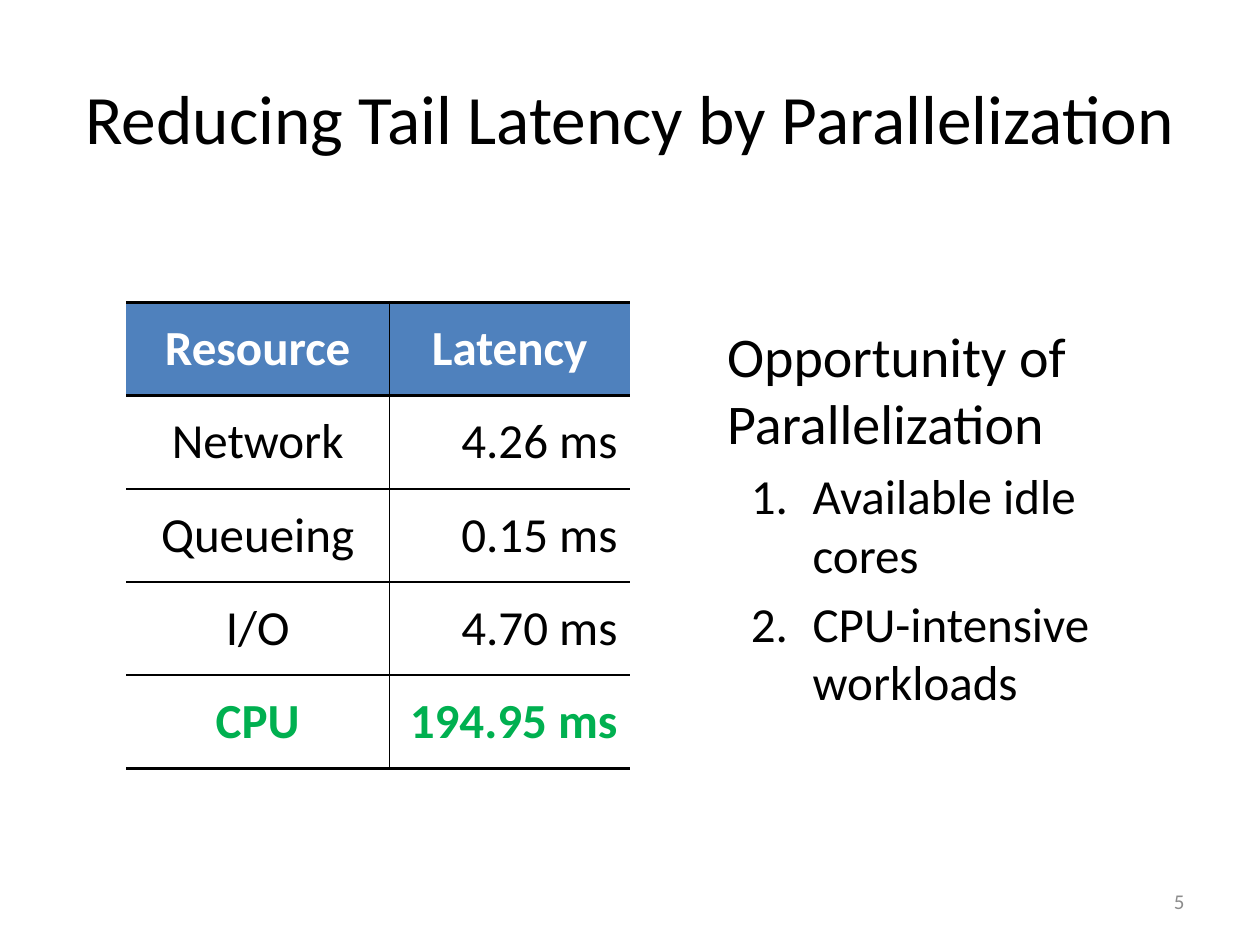
"""Build a slide on tail latency with a resource table and a numbered list."""
from lxml.etree import SubElement
from pptx import Presentation
from pptx.dml.color import RGBColor
from pptx.enum.text import MSO_ANCHOR, MSO_AUTO_SIZE, PP_ALIGN
from pptx.oxml import parse_xml
from pptx.oxml.ns import nsdecls, qn
from pptx.util import Inches, Pt

BLACK = RGBColor(0x00, 0x00, 0x00)
WHITE = RGBColor(0xFF, 0xFF, 0xFF)
BLUE = RGBColor(0x4F, 0x81, 0xBD)
GREEN = RGBColor(0x00, 0xB0, 0x50)
GRAY = RGBColor(0x8C, 0x8C, 0x8C)


def format_text(paragraph, size, color=BLACK, bold=False):
    for span in paragraph.runs:
        span.font.name = "Calibri"
        span.font.size = Pt(size)
        span.font.bold = bold
        span.font.color.rgb = color


def set_borders(cell, widths):
    properties = cell._tc.get_or_add_tcPr()
    for position, (side, width) in enumerate(widths.items()):
        fill = f'<a:solidFill><a:srgbClr val="{BLACK}"/></a:solidFill>' if width else "<a:noFill/>"
        line = f'<a:ln{side} {nsdecls("a")} w="{Pt(width)}">{fill}</a:ln{side}>'
        properties.insert(position, parse_xml(line))


deck = Presentation()
deck.slide_width, deck.slide_height = Inches(10), Inches(7.5)
page = deck.slides.add_slide(deck.slide_layouts[1])

title = page.shapes.title
title.left, title.top, title.width, title.height = Inches(0.5), Inches(0.3), Inches(9), Inches(1.25)
title.text_frame.text = "Reducing Tail Latency by Parallelization"
title.text_frame.auto_size = MSO_AUTO_SIZE.NONE
title.text_frame.vertical_anchor = MSO_ANCHOR.MIDDLE
format_text(title.text_frame.paragraphs[0], 39.6)

body = page.placeholders[1]
body.left, body.top, body.width, body.height = Inches(5.67), Inches(2.5), Inches(3.75), Inches(3.33)
body.text_frame.text = "Opportunity of Parallelization"
body.text_frame.auto_size = MSO_AUTO_SIZE.NONE
heading = body.text_frame.paragraphs[0]
format_text(heading, 32)
heading_properties = heading._p.get_or_add_pPr()
heading_properties.set("marL", "0")
heading_properties.set("indent", "0")
SubElement(heading_properties, qn("a:buNone"))

for item in ("Available idle cores", "CPU-intensive workloads"):
    paragraph = body.text_frame.add_paragraph()
    paragraph.text = item
    paragraph.level = 1
    format_text(paragraph, 28)
    item_properties = paragraph._p.get_or_add_pPr()
    item_properties.set("marL", str(Inches(0.68)))
    item_properties.set("indent", str(Inches(-0.49)))
    SubElement(item_properties, qn("a:buFont"), typeface="+mj-lt")
    SubElement(item_properties, qn("a:buAutoNum"), type="arabicPeriod")

rows = [
    ("Resource", "Latency"),
    ("Network", "4.26 ms"),
    ("Queueing", "0.15 ms"),
    ("I/O", "4.70 ms"),
    ("CPU", "194.95 ms"),
]
last = len(rows) - 1
table = page.shapes.add_table(len(rows), 2, Inches(1), Inches(2.4), Inches(4), Inches(3.7)).table
table.horz_banding = False
table.columns[0].width, table.columns[1].width = Inches(2.09), Inches(1.91)

for row, values in enumerate(rows):
    table.rows[row].height = Inches(0.74)
    for column, value in enumerate(values):
        cell = table.cell(row, column)
        cell.text_frame.text = value
        cell.vertical_anchor = MSO_ANCHOR.MIDDLE
        paragraph = cell.text_frame.paragraphs[0]
        paragraph.alignment = PP_ALIGN.RIGHT if row and column else PP_ALIGN.CENTER
        color = {0: WHITE, last: GREEN}.get(row, BLACK)
        format_text(paragraph, 28, color, bold=row in (0, last))
        if row == 0:
            cell.fill.solid()
            cell.fill.fore_color.rgb = BLUE
        else:
            cell.fill.background()
        set_borders(cell, {
            "L": column,
            "R": 1 - column,
            "T": 2 if row in (0, 1) else 1,
            "B": 2 if row in (0, last) else 1,
        })

number_box = page.shapes.add_textbox(Inches(7.17), Inches(6.95), Inches(2.33), Inches(0.4))
number_box.text_frame.word_wrap = True
number_box.text_frame.vertical_anchor = MSO_ANCHOR.MIDDLE
number_box.text_frame.text = "5"
number = number_box.text_frame.paragraphs[0]
number.alignment = PP_ALIGN.RIGHT
format_text(number, 12, GRAY)

deck.save("out.pptx")
